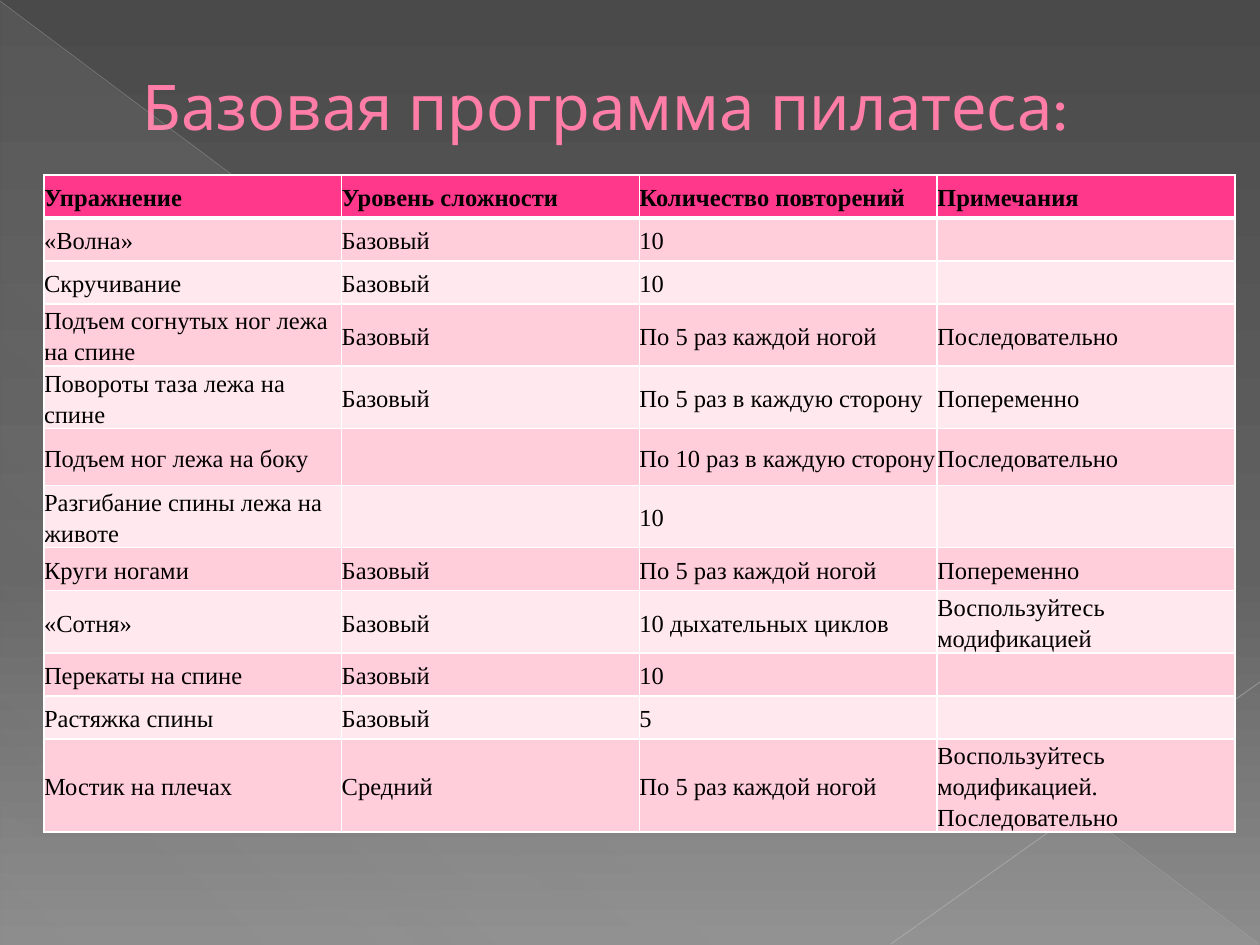
import pptx
import pptx.dml.color
import pptx.enum.shapes
import pptx.enum.text
import pptx.oxml
import pptx.oxml.ns
import pptx.util

EMU_PER_PX = 914400 / 126
COLORS = {
    "title": "FF7DA7", "text": "000000", "border": "FFFFFF",
    "header": "FF388C", "odd": "FFCEDA", "even": "FFE8EE",
    "shade": "D2D2D2", "diagonal": "BFBFBF", "corner": "C6C6C6",
}
BACKGROUND_STOPS = [(0, "4A4A4A", 100), (60, "626262", 100), (100, "8C8C8C", 100)]
SHADE_STOPS = [(0, COLORS["shade"], 10), (70, COLORS["shade"], 8), (100, COLORS["shade"], 1)]
SHORT, MEDIUM, TALL = 43, 57, 86
HEADER = ("Упражнение", "Уровень сложности", "Количество повторений", "Примечания")
EXERCISES = [
    (SHORT, "«Волна»", "Базовый", "10", ""),
    (SHORT, "Скручивание", "Базовый", "10", ""),
    (MEDIUM, "Подъем согнутых ног лежа на спине", "Базовый", "По 5 раз каждой ногой", "Последовательно"),
    (MEDIUM, "Повороты таза лежа на спине", "Базовый", "По 5 раз в каждую сторону", "Попеременно"),
    (MEDIUM, "Подъем ног лежа на боку", "", "По 10 раз в каждую сторону", "Последовательно"),
    (MEDIUM, "Разгибание спины лежа на животе", "", "10", ""),
    (SHORT, "Круги ногами", "Базовый", "По 5 раз каждой ногой", "Попеременно"),
    (MEDIUM, "«Сотня»", "Базовый", "10 дыхательных циклов", "Воспользуйтесь модификацией"),
    (SHORT, "Перекаты на спине", "Базовый", "10", ""),
    (SHORT, "Растяжка спины", "Базовый", "5", ""),
    (TALL, "Мостик на плечах", "Средний", "По 5 раз каждой ногой",
     "Воспользуйтесь модификацией. Последовательно"),
]


def px(n):
    return pptx.util.Emu(round(n * EMU_PER_PX))


def rgb(color):
    return pptx.dml.color.RGBColor.from_string(color)


def xml(markup):
    """Parse one element, declaring the drawing namespace on its first tag."""
    tag, rest = markup.split(" ", 1)
    return pptx.oxml.parse_xml(f"{tag} {pptx.oxml.ns.nsdecls('a')} {rest}")


def set_gradient(fill, element, stops, angle):
    """Give fill, which lives inside element, a linear gradient of (percent, color, opacity)."""
    fill.gradient()
    grad = element.xpath(".//a:gradFill")[0]
    for child in list(grad):
        grad.remove(child)
    markup = "".join(
        f'<a:gs pos="{pos * 1000}"><a:srgbClr val="{color}"><a:alpha val="{alpha * 1000}"/>'
        "</a:srgbClr></a:gs>" for pos, color, alpha in stops)
    grad.append(xml(f"<a:gsLst >{markup}</a:gsLst>"))
    grad.append(xml(f'<a:lin ang="{angle * 60000}" scaled="0"/>'))


def set_text(tf, text, *, font, size, color, bold=False, line_spacing=None):
    p = tf.paragraphs[0]
    p.alignment = pptx.enum.text.PP_ALIGN.LEFT
    p.line_spacing = line_spacing
    r = p.add_run()
    r.text = text
    r.font.name = font
    r.font.size = pptx.util.Pt(size)
    r.font.bold = bold
    r.font.color.rgb = rgb(color)


def add_line(s, start, end, color, width, opacity):
    line = s.shapes.add_connector(
        pptx.enum.shapes.MSO_CONNECTOR.STRAIGHT, *map(px, start + end))
    line.line.width = pptx.util.Pt(width)
    line.line.color.rgb = rgb(color)
    sp_pr = line._element.spPr
    sp_pr.xpath(".//a:srgbClr")[0].append(xml(f'<a:alpha val="{opacity * 1000}"/>'))
    sp_pr.append(xml("<a:effectLst />"))


def add_backdrop(s, x, y, w, h):
    set_gradient(s.background.fill, s._element, BACKGROUND_STOPS, 90)
    shade = s.shapes.add_shape(
        pptx.enum.shapes.MSO_SHAPE.RIGHT_TRIANGLE, px(x + 1), px(y + 2), px(w - 2), px(h - 2))
    shade.shadow.inherit = False
    shade.line.fill.background()
    set_gradient(shade.fill, shade._element, SHADE_STOPS, 133)
    add_line(s, (x, y + 1), (x + w - 1, y + h - 1), COLORS["diagonal"], 0.39, 35)
    add_line(s, (x + w, y + 682), (x + 891, y + h - 1), COLORS["corner"], 0.47, 45)


def add_title(s, x, y, w, h):
    title = s.shapes.title
    title.left, title.top, title.width, title.height = map(px, (x, y, w, h))
    tf = title.text_frame
    tf.vertical_anchor = pptx.enum.text.MSO_ANCHOR.MIDDLE
    set_text(tf, "Базовая программа пилатеса:", font="League Spartan", size=36,
             color=COLORS["title"])
    p_pr = tf.paragraphs[0]._p.get_or_add_pPr()
    p_pr.set("marL", str(px(67)))
    p_pr.set("indent", "0")


def set_borders(cell, bottom=1):
    tc_pr = cell._tc.get_or_add_tcPr()
    for i, (side, width) in enumerate((("L", 1), ("R", 1), ("T", 1), ("B", bottom))):
        tc_pr.insert(i, xml(
            f'<a:ln{side} w="{pptx.util.Pt(width)}"><a:solidFill>'
            f'<a:srgbClr val="{COLORS["border"]}"/></a:solidFill></a:ln{side}>'))


def add_program_table(s, x, y, w):
    rows = [(SHORT, *HEADER)] + EXERCISES
    height = sum(row[0] for row in rows)
    table = s.shapes.add_table(
        len(rows), len(HEADER), px(x), px(y), px(w), px(height)).table
    table.first_row = table.horz_banding = False
    for i, (row_height, *texts) in enumerate(rows):
        table.rows[i].height = px(row_height)
        is_header = i == 0
        fill = "header" if is_header else "odd" if i % 2 else "even"
        for j, text in enumerate(texts):
            cell = table.cell(i, j)
            cell.margin_left = cell.margin_right = cell.margin_top = cell.margin_bottom = 0
            cell.vertical_anchor = pptx.enum.text.MSO_ANCHOR.MIDDLE
            cell.fill.solid()
            cell.fill.fore_color.rgb = rgb(COLORS[fill])
            set_borders(cell, bottom=3 if is_header else 1)
            if text:
                set_text(cell.text_frame, text, font="Times New Roman", size=14,
                         color=COLORS["text"], bold=is_header, line_spacing=1.15)


def main():
    prs = pptx.Presentation()
    prs.slide_width, prs.slide_height = px(1260), px(945)
    s = prs.slides.add_slide(prs.slide_layouts[5])
    add_backdrop(s, 0, 0, 1260, 945)
    add_title(s, 63, 37, 1133, 137)
    add_program_table(s, 44, 175, 1191)
    prs.save("out.pptx")


if __name__ == "__main__":
    main()
